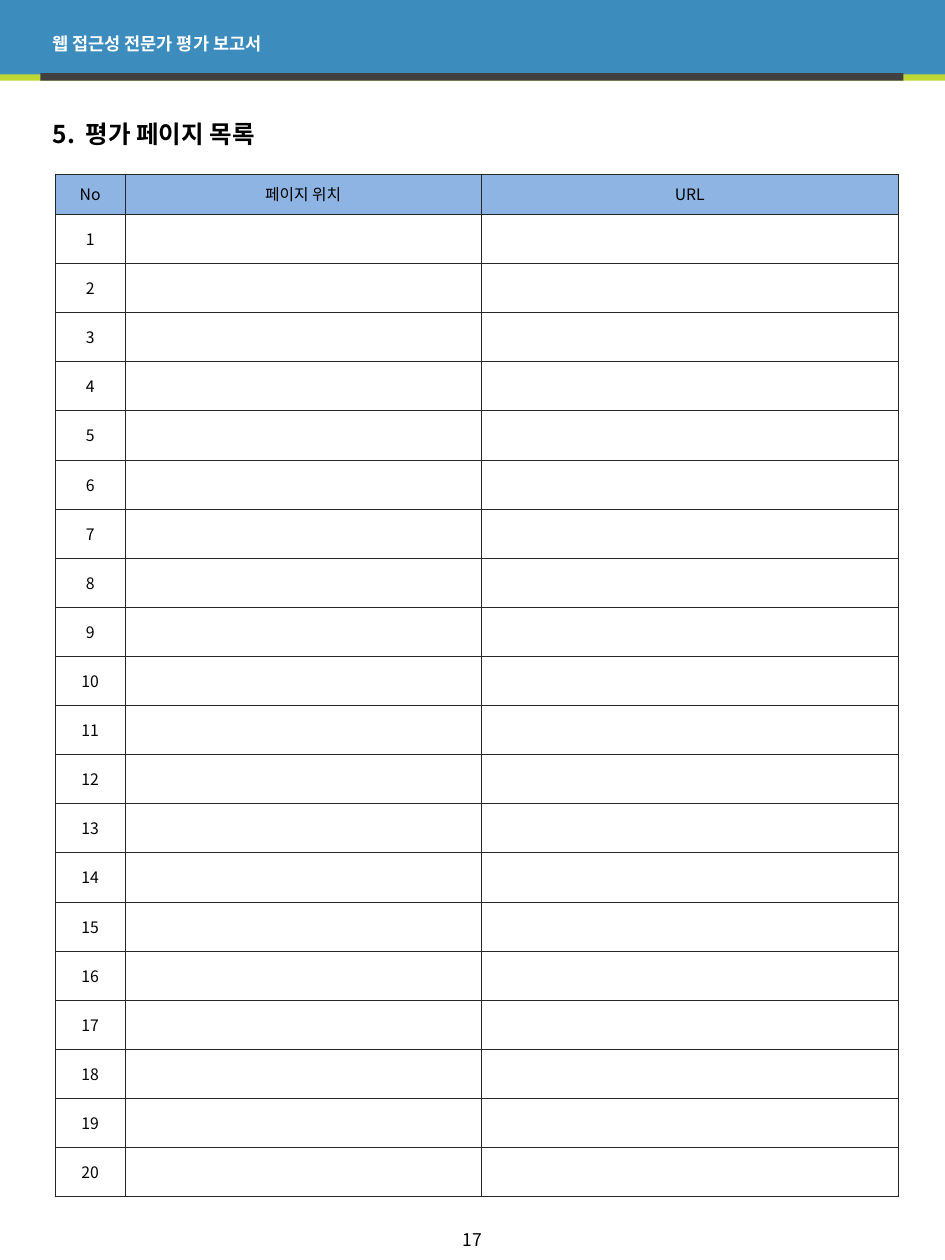
"""Build the page list slide of a web accessibility report."""
from lxml.etree import SubElement
from pptx import Presentation
from pptx.dml.color import RGBColor
from pptx.enum.shapes import MSO_SHAPE
from pptx.enum.text import MSO_ANCHOR, PP_ALIGN
from pptx.oxml.ns import qn
from pptx.util import Inches, Pt

FACE = "Noto Sans CJK KR"


def hue(code):
    return RGBColor.from_string(code)


def write(para, text, size, color="000000", bold=False, align=PP_ALIGN.LEFT):
    para.alignment = align
    run = para.add_run()
    run.text = text
    run.font.color.rgb = hue(color)
    style = {"name": FACE, "size": Pt(size), "bold": bold}
    for key, value in style.items():
        setattr(run.font, key, value)
    SubElement(run.font._element, qn("a:ea"), typeface=FACE)


deck = Presentation()
deck.slide_width, deck.slide_height = Inches(7.5), Inches(10)
slide = deck.slides.add_slide(deck.slide_layouts[6])

bands = [
    (0, 0.58, 7.5, 0.06, "BED732"),
    (0, 0, 7.5, 0.59, "3C8CBE"),
    (0.32, 0.58, 6.85, 0.06, "404040"),
]
for *spot, color in bands:
    band = slide.shapes.add_shape(MSO_SHAPE.RECTANGLE, *map(Inches, spot))
    band.shadow.inherit = False
    band.fill.solid()
    band.fill.fore_color.rgb = hue(color)
    band.line.fill.background()

labels = [
    ((0.32, 0.11, 6.85, 0.47), "웹 접근성 전문가 평가 보고서",
     {"size": 10, "color": "FFFFFF", "bold": True}),
    ((0.32, 0.83, 6.85, 0.47), "5.\t평가 페이지 목록", {"size": 14, "bold": True}),
    ((0, 9.65, 7.5, 0.37), "17", {"size": 10, "align": PP_ALIGN.CENTER}),
]
for spot, text, look in labels:
    frame = slide.shapes.add_textbox(*map(Inches, spot)).text_frame
    frame.word_wrap = True
    frame.vertical_anchor = MSO_ANCHOR.MIDDLE
    para = frame.paragraphs[0]
    if "\t" in text:
        tabs = SubElement(para._p.get_or_add_pPr(), qn("a:tabLst"))
        SubElement(tabs, qn("a:tab"), pos=str(Inches(0.26)), algn="l")
    write(para, text, **look)

rows = [("No", "페이지 위치", "URL")]
rows += [(str(num), "", "") for num in range(1, 21)]
grid = slide.shapes.add_table(
    len(rows), 3, Inches(0.44), Inches(1.38), Inches(6.69), Inches(8.11)
).table
for col, width in zip(grid.columns, (0.55, 2.83, 3.31)):
    col.width = Inches(width)

for top, texts in enumerate(rows):
    grid.rows[top].height = Inches(0.39 if top else 0.32)
    for left, text in enumerate(texts):
        cell = grid.cell(top, left)
        cell.vertical_anchor = MSO_ANCHOR.MIDDLE
        props = cell._tc.get_or_add_tcPr()
        for side in ("lnL", "lnR", "lnT", "lnB"):
            edge = SubElement(props, qn(f"a:{side}"), w=str(Pt(0.25)))
            fill = SubElement(edge, qn("a:solidFill"))
            SubElement(fill, qn("a:srgbClr"), val="262626")
        cell.fill.solid()
        cell.fill.fore_color.rgb = hue("FFFFFF" if top else "8EB4E3")
        para = cell.text_frame.paragraphs[0]
        if text:
            write(para, text, 9, align=PP_ALIGN.CENTER)
        else:
            SubElement(para._p, qn("a:endParaRPr"), sz="900")

deck.save("out.pptx")
